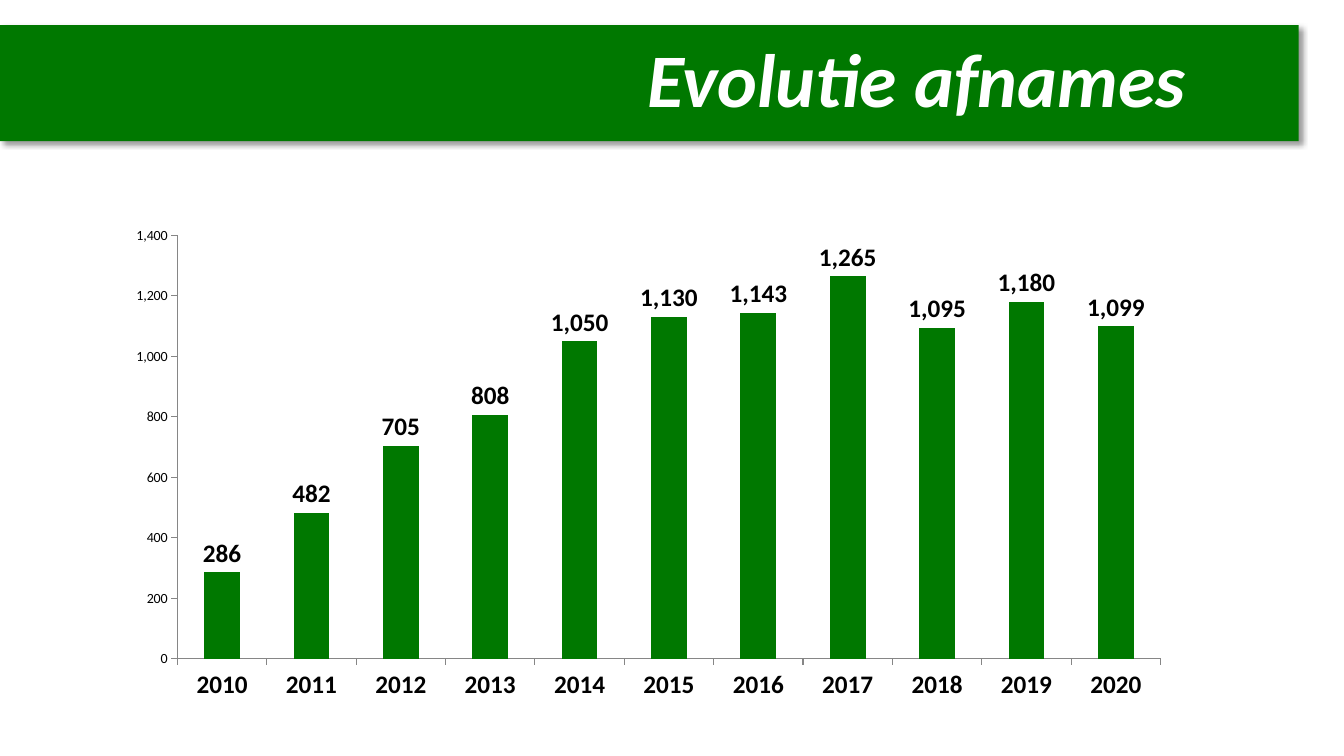
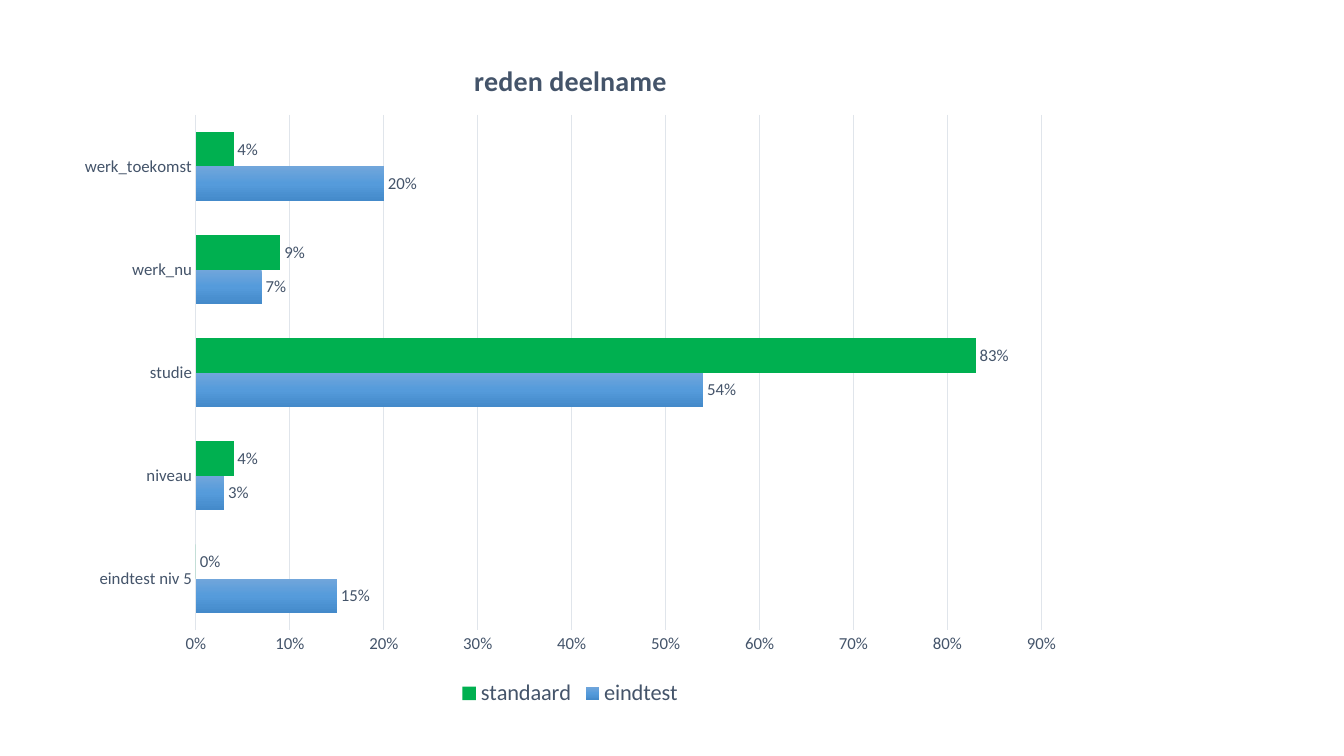
from dataclasses import dataclass

from pptx import Presentation
from pptx.chart.axis import _BaseAxis
from pptx.chart.chart import Chart
from pptx.chart.data import CategoryChartData
from pptx.dml.color import RGBColor
from pptx.enum.chart import XL_CHART_TYPE, XL_LABEL_POSITION, XL_LEGEND_POSITION, XL_TICK_MARK
from pptx.enum.shapes import MSO_SHAPE
from pptx.enum.text import MSO_ANCHOR, PP_ALIGN
from pptx.oxml import parse_xml
from pptx.oxml.ns import nsdecls, qn
from pptx.slide import Slide
from pptx.text.text import Font
from pptx.util import Inches, Pt

FONT = "Calibri"
WHITE = RGBColor(0xFF, 0xFF, 0xFF)
BLACK = RGBColor(0x00, 0x00, 0x00)
BAND_GREEN = RGBColor(0x00, 0x78, 0x00)
BAR_GREEN = RGBColor(0x00, 0xB0, 0x50)
SLATE = RGBColor(0x44, 0x54, 0x6A)
PALE_LINE = RGBColor(0xE0, 0xE5, 0xEB)
AXIS_GRAY = RGBColor(0x86, 0x86, 0x86)
BLUE_STOPS = (
    (0, RGBColor(0x71, 0xA6, 0xDB)),
    (50, RGBColor(0x55, 0x9B, 0xDB)),
    (100, RGBColor(0x44, 0x8A, 0xCA)),
)
TITLE_ONLY, BLANK = 5, 6


@dataclass(frozen=True)
class Area:
    left: float
    top: float
    width: float
    height: float

    def lengths(self) -> tuple:
        return tuple(Inches(v) for v in (self.left, self.top, self.width, self.height))


@dataclass(frozen=True)
class BarSeries:
    name: str
    values: tuple
    color: RGBColor | None  # None means the blue gradient


@dataclass(frozen=True)
class BarChart:
    kind: XL_CHART_TYPE
    area: Area
    plot_area: Area  # fractions of the chart area
    categories: tuple
    series: tuple
    number_format: str
    gap: int
    maximum: float
    step: float


def set_font(font: Font, *, size: float, color: RGBColor = BLACK,
             bold: bool = False, italic: bool = False) -> None:
    font.name = FONT
    font.size = Pt(size)
    font.bold = bold
    font.italic = italic
    font.color.rgb = color


def add_band(page: Slide, area: Area) -> None:
    band = page.shapes.add_shape(MSO_SHAPE.RECTANGLE, *area.lengths())
    band.fill.solid()
    band.fill.fore_color.rgb = BAND_GREEN
    band.line.fill.background()
    band.shadow.inherit = False
    band._element.spPr.find(qn("a:effectLst")).append(parse_xml(
        f'<a:outerShdw {nsdecls("a")} blurRad="{Pt(4)}" dist="{Pt(3)}" dir="2700000" '
        'algn="tl" rotWithShape="0"><a:srgbClr val="000000"><a:alpha val="40000"/>'
        '</a:srgbClr></a:outerShdw>'))
    page.shapes._spTree.insert(2, band._element)  # behind the title


def add_title(page: Slide, text: str) -> None:
    add_band(page, Area(0, 0.25, 12.88, 1.15))
    title = page.shapes.title
    title.left, title.top, title.width, title.height = Area(2.66, 0.48, 9.2, 0.69).lengths()
    frame = title.text_frame
    frame.text = text
    frame.vertical_anchor = MSO_ANCHOR.MIDDLE
    para = frame.paragraphs[0]
    para.alignment = PP_ALIGN.RIGHT
    para.line_spacing = 0.9
    set_font(para.runs[0].font, size=54, color=WHITE, bold=True, italic=True)


def set_layout(element, *, left: float, top: float,
               width: float | None = None, height: float | None = None) -> None:
    """Place a chart title or plot area by fractions of the chart."""
    old = element.find(qn("c:layout"))
    if old is not None:
        element.remove(old)
    target = '<c:layoutTarget val="inner"/>' if width else ""
    sizes = f'<c:w val="{width}"/><c:h val="{height}"/>' if width else ""
    layout = parse_xml(
        f'<c:layout {nsdecls("c")}><c:manualLayout>{target}<c:xMode val="edge"/>'
        f'<c:yMode val="edge"/><c:x val="{left}"/><c:y val="{top}"/>{sizes}'
        '</c:manualLayout></c:layout>')
    has_text = element.find(qn("c:tx")) is not None
    element.insert(1 if has_text else 0, layout)


def fill_blue_gradient(series) -> None:
    stops = "".join(f'<a:gs pos="{pos * 1000}"><a:srgbClr val="{color}"/></a:gs>'
                    for pos, color in BLUE_STOPS)
    series._element.get_or_add_spPr().insert(0, parse_xml(
        f'<a:gradFill {nsdecls("a")} rotWithShape="1"><a:gsLst>{stops}</a:gsLst>'
        '<a:lin ang="5400000" scaled="0"/></a:gradFill>'))


def add_bar_chart(page: Slide, model: BarChart) -> Chart:
    data = CategoryChartData(number_format=model.number_format)
    data.categories = model.categories
    for item in model.series:
        data.add_series(item.name, item.values)
    chart = page.shapes.add_chart(model.kind, *model.area.lengths(), data).chart
    set_font(chart.font, size=10)
    chart.has_title = False
    chart.has_legend = False

    plot = chart.plots[0]
    plot.gap_width = model.gap
    plot.overlap = 0
    plot.vary_by_categories = False
    for series, item in zip(plot.series, model.series):
        series.invert_if_negative = False
        if item.color is None:
            fill_blue_gradient(series)
        else:
            series.format.fill.solid()
            series.format.fill.fore_color.rgb = item.color

    value_axis = chart.value_axis
    value_axis.minimum_scale = 0
    value_axis.maximum_scale = model.maximum
    value_axis.major_unit = model.step
    value_axis.has_major_gridlines = False
    value_axis.tick_labels.number_format = model.number_format
    value_axis.tick_labels.number_format_is_linked = False
    box = model.plot_area
    set_layout(chart._chartSpace.chart.plotArea, left=box.left, top=box.top,
               width=box.width, height=box.height)
    return chart


def format_axis(axis: _BaseAxis, *, size: float, color: RGBColor = BLACK, bold: bool = False,
                tick: XL_TICK_MARK = XL_TICK_MARK.NONE, line: RGBColor | None = None) -> None:
    axis.major_tick_mark = tick
    axis.minor_tick_mark = XL_TICK_MARK.NONE
    set_font(axis.tick_labels.font, size=size, color=color, bold=bold)
    if line is None:
        axis.format.line.fill.background()
    else:
        axis.format.line.color.rgb = line
        axis.format.line.width = Pt(0.75)


def show_values(chart: Chart, number_format: str, *, size: float,
                color: RGBColor = BLACK, bold: bool = False) -> None:
    for series in chart.plots[0].series:
        labels = series.data_labels
        labels.show_value = True
        labels.position = XL_LABEL_POSITION.OUTSIDE_END
        labels.number_format = number_format
        labels.number_format_is_linked = False
        set_font(labels.font, size=size, color=color, bold=bold)


def build_evolution(page: Slide) -> None:
    add_title(page, "Evolutie afnames")
    model = BarChart(
        kind=XL_CHART_TYPE.COLUMN_CLUSTERED,
        area=Area(1.29, 2.11, 10.44, 4.91),
        plot_area=Area(0.045, 0.046, 0.934, 0.856),
        categories=tuple(str(year) for year in range(2010, 2021)),
        series=(BarSeries("Series 1", (286, 482, 705, 808, 1050, 1130, 1143, 1265,
                                       1095, 1180, 1099), BAND_GREEN),),
        number_format="#,##0", gap=150, maximum=1400, step=200)
    chart = add_bar_chart(page, model)
    format_axis(chart.category_axis, size=18, bold=True,
                tick=XL_TICK_MARK.OUTSIDE, line=AXIS_GRAY)
    format_axis(chart.value_axis, size=10, tick=XL_TICK_MARK.OUTSIDE, line=AXIS_GRAY)
    show_values(chart, model.number_format, size=18, bold=True)


def build_reasons(page: Slide) -> None:
    model = BarChart(
        kind=XL_CHART_TYPE.BAR_CLUSTERED,
        area=Area(0.64, 0.28, 10.03, 6.78),
        plot_area=Area(0.13, 0.127, 0.836, 0.754),
        categories=("eindtest niv 5", "niveau", "studie", "werk_nu", "werk_toekomst"),
        series=(BarSeries("eindtest", (0.15, 0.03, 0.54, 0.07, 0.2), None),
                BarSeries("standaard", (0, 0.04, 0.83, 0.09, 0.04), BAR_GREEN)),
        number_format="0%", gap=100, maximum=0.9, step=0.1)
    chart = add_bar_chart(page, model)
    format_axis(chart.category_axis, size=12, color=SLATE, line=PALE_LINE)
    format_axis(chart.value_axis, size=12, color=SLATE)
    chart.value_axis.has_major_gridlines = True
    grid = chart.value_axis.major_gridlines.format.line
    grid.color.rgb = PALE_LINE
    grid.width = Pt(0.75)
    show_values(chart, model.number_format, size=12, color=SLATE)

    chart.has_title = True
    title = chart.chart_title
    title.text_frame.text = "reden deelname"
    set_font(title.text_frame.paragraphs[0].runs[0].font, size=20, color=SLATE, bold=True)
    set_layout(title._element, left=0.4, top=0.04)
    chart.has_legend = True
    chart.legend.position = XL_LEGEND_POSITION.BOTTOM
    chart.legend.include_in_layout = False
    set_font(chart.legend.font, size=16, color=SLATE)


def main() -> None:
    deck = Presentation()
    deck.slide_width, deck.slide_height = Inches(13.33), Inches(7.5)
    for layout, build in ((TITLE_ONLY, build_evolution), (BLANK, build_reasons)):
        build(deck.slides.add_slide(deck.slide_layouts[layout]))
    deck.save("out.pptx")


if __name__ == "__main__":
    main()
